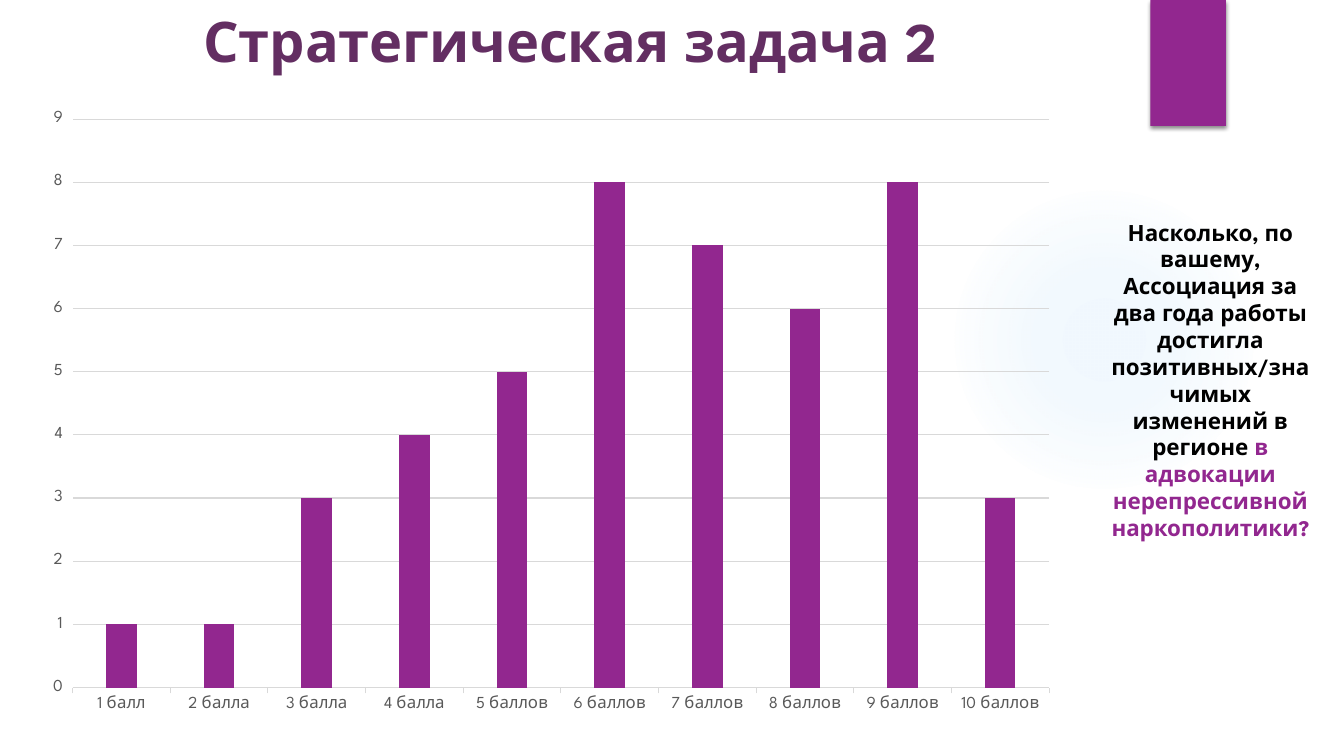
from lxml import etree
from pptx import Presentation
from pptx import util as u
from pptx.chart.data import CategoryChartData
from pptx.dml.color import RGBColor
from pptx.enum import chart as ch, shapes, text
from pptx.oxml import parse_xml
from pptx.oxml.ns import nsdecls

COLORS = {"purple": "92278F", "title": "632E62", "black": "000000",
          "glow": "45A5ED", "axis": "595959", "grid": "D9D9D9"}
FONT = "League Spartan"
SCORES = [1, 1, 3, 4, 5, 8, 7, 6, 8, 3]


def rgb(name):
    return RGBColor.from_string(COLORS[name])


def apply_format(target, values):
    for attribute, value in values.items():
        setattr(target, attribute, value)


def style_font(font, size, color, bold=False):
    apply_format(font, {"name": FONT, "size": u.Pt(size), "bold": bold})
    font.color.rgb = rgb(color)


def add_plain_shape(slide, kind, box):
    shape = slide.shapes.add_shape(kind, *map(u.Inches, box))
    shape.shadow.inherit = False
    shape.line.fill.background()
    return shape


def add_glow(slide, box):
    glow = add_plain_shape(slide, shapes.MSO_SHAPE.OVAL, box)
    glow.fill.background()
    stops = "".join(
        f'<a:gs pos="{pos * 1000}"><a:srgbClr val="{COLORS["glow"]}">'
        f'<a:alpha val="{alpha * 1000}"/></a:srgbClr></a:gs>'
        for pos, alpha in [(0, 7), (36, 6), (69, 0), (100, 0)])
    gradient = parse_xml(
        f'<a:gradFill {nsdecls("a")} rotWithShape="1"><a:gsLst>{stops}</a:gsLst>'
        '<a:path path="circle"><a:fillToRect l="50000" t="50000" r="50000" b="50000"/>'
        '</a:path></a:gradFill>')
    properties = glow.fill._xPr
    properties.replace(properties.find("{*}noFill"), gradient)


def add_ribbon(slide, box):
    ribbon = add_plain_shape(slide, shapes.MSO_SHAPE.RECTANGLE, box)
    ribbon.fill.solid()
    ribbon.fill.fore_color.rgb = rgb("purple")
    # Soft shadow below the ribbon
    effects = ribbon._element.spPr.find("{*}effectLst")
    effects.append(etree.fromstring(
        f'<a:outerShdw {nsdecls("a")} blurRad="{u.Pt(3)}" dist="{u.Pt(2)}" dir="5400000" '
        'rotWithShape="0"><a:srgbClr val="000000"><a:alpha val="45000"/></a:srgbClr>'
        '</a:outerShdw>'))


def add_centered_text(slide, box, runs, size):
    frame = slide.shapes.add_textbox(*map(u.Inches, box)).text_frame
    apply_format(frame, {"word_wrap": True, "vertical_anchor": text.MSO_ANCHOR.TOP})
    paragraph = frame.paragraphs[0]
    paragraph.alignment = text.PP_ALIGN.CENTER
    for words, color in runs:
        run = paragraph.add_run()
        run.text = words
        style_font(run.font, size, color, bold=True)


def add_score_chart(slide, box):
    data = CategoryChartData()
    data.categories = [
        f"{n} {'балл' if n == 1 else 'балла' if n < 5 else 'баллов'}"
        for n in range(1, len(SCORES) + 1)]
    data.add_series("Series 1", SCORES)
    chart = slide.shapes.add_chart(
        ch.XL_CHART_TYPE.COLUMN_CLUSTERED, *map(u.Inches, box), data).chart
    apply_format(chart, {"has_legend": False, "has_title": False})
    style_font(chart.font, 10, "black")

    # Columns
    plot = chart.plots[0]
    apply_format(plot, {"gap_width": 219, "overlap": -27, "vary_by_categories": False})
    columns = plot.series[0].format.fill
    columns.solid()
    columns.fore_color.rgb = rgb("purple")

    # Axes and grid
    scores, counts = chart.category_axis, chart.value_axis
    for axis in (scores, counts):
        style_font(axis.tick_labels.font, 12, "axis")
        axis.major_tick_mark = ch.XL_TICK_MARK.OUTSIDE
    apply_format(counts, {"minimum_scale": 0, "maximum_scale": 9, "major_unit": 1,
                          "has_major_gridlines": True})
    for line in (scores.format.line, counts.major_gridlines.format.line):
        line.color.rgb = rgb("grid")
        line.width = u.Pt(0.75)
    counts.format.line.fill.background()


def build_slide(slide):
    # Background decoration
    add_glow(slide, (9.41, 1.83, 3.08, 3.08))
    add_ribbon(slide, (11.41, 0, 0.75, 1.25))
    # Title, chart and survey question
    add_centered_text(slide, (0, 0.02, 11.31, 0.76),
                      [("Стратегическая задача 2", "title")], 40)
    add_score_chart(slide, (0.32, 0.98, 10.29, 6.22))
    add_centered_text(slide, (10.92, 2.12, 2.17, 3.06), [
        ("Насколько, по вашему, Ассоциация за два года работы достигла "
         "позитивных/значимых изменений в регионе ", "black"),
        ("в адвокации нерепрессивной наркополитики?", "purple")], 16)


def main():
    deck = Presentation()
    apply_format(deck, {"slide_width": u.Inches(13.33), "slide_height": u.Inches(7.5)})
    build_slide(deck.slides.add_slide(deck.slide_layouts[6]))
    deck.save("out.pptx")


if __name__ == "__main__":
    main()
